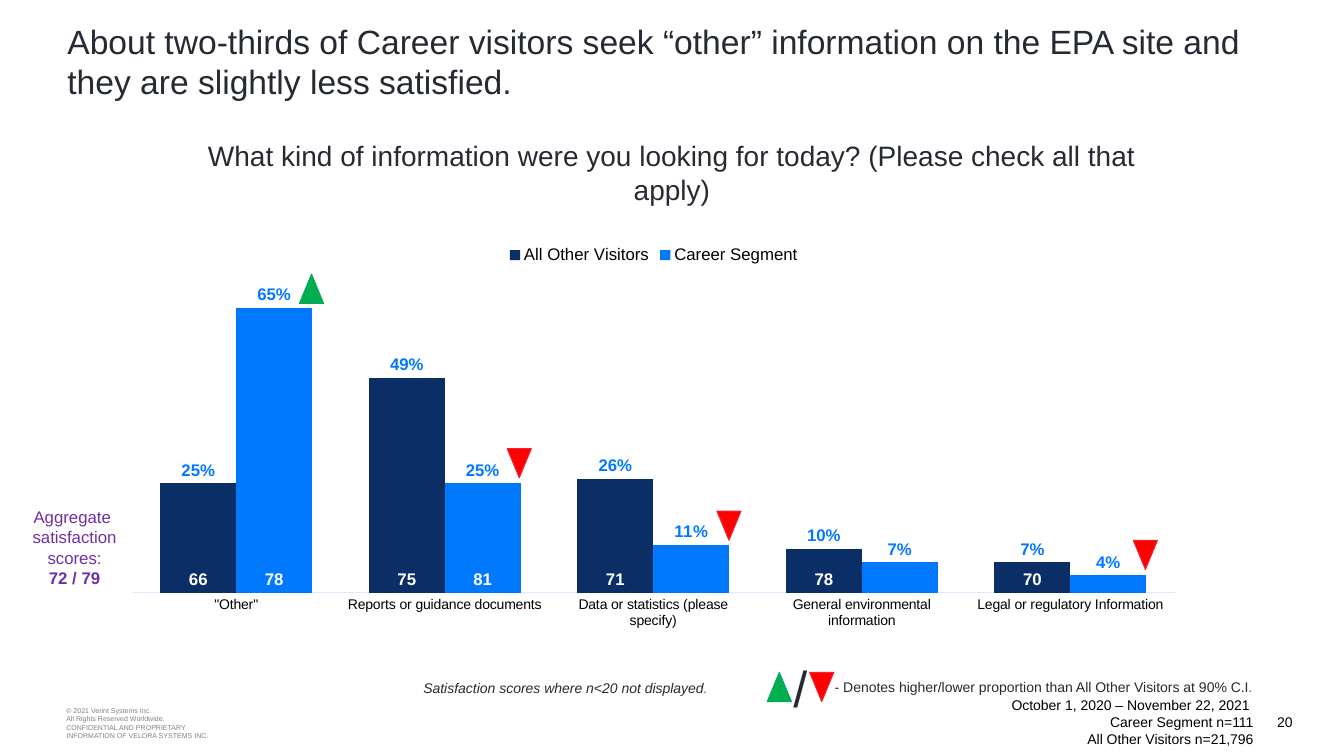
import copy
from dataclasses import dataclass

import pptx
import pptx.chart.data
import pptx.dml.color
import pptx.enum.chart
import pptx.enum.shapes
import pptx.enum.text
import pptx.oxml
import pptx.oxml.ns
import pptx.util

PX = 9144  # one px is a hundredth of an inch
FONT = "Arial"
COLORS = {
    "ink": "262A32", "black": "000000", "gray": "808080", "white": "FFFFFF",
    "navy": "0A2E65", "blue": "0079FF", "pale": "D9EBFF", "purple": "7030A0",
    "green": "00B050", "green line": "09A761", "red": "FF0000", "red line": "EE2737",
}
ALIGN = pptx.enum.text.PP_ALIGN
ANCHOR = pptx.enum.text.MSO_ANCHOR
LABEL = pptx.enum.chart.XL_LABEL_POSITION
TICK = pptx.enum.chart.XL_TICK_MARK


@dataclass(frozen=True)
class Run:
    text: str
    color: str = "ink"
    bold: bool = False
    italic: bool = False


@dataclass(frozen=True)
class TextBlock:
    box: tuple[int, int, int, int]
    size: int
    paragraphs: list[list[Run]]
    align: ALIGN = ALIGN.LEFT
    anchor: ANCHOR = ANCHOR.TOP
    wrap: bool = True


@dataclass(frozen=True)
class Marker:
    """A triangle for a higher (up) or lower (down) proportion."""
    left: int
    top: int
    higher: bool = False


@dataclass(frozen=True)
class Series:
    name: str
    values: tuple
    fill: str | None
    label_color: str
    label_position: LABEL
    number_format: str


def lines(color: str, *texts: str) -> list[list[Run]]:
    return [[Run(text, color)] for text in texts]


TEXTS = [
    TextBlock((56, 694, 240, 47), 5, lines(
        "gray", "© 2021 Verint Systems Inc.", "All Rights Reserved Worldwide.",
        "CONFIDENTIAL AND PROPRIETARY", "INFORMATION OF VELORA SYSTEMS INC."),
        anchor=ANCHOR.MIDDLE),
    TextBlock((1181, 693, 111, 47), 10, lines("black", "20"), ALIGN.RIGHT, ANCHOR.MIDDLE),
    TextBlock((57, 16, 1220, 77), 24, lines(
        "ink", "About two-thirds of Career visitors seek “other” information on the EPA site "
        "and they are slightly less satisfied.")),
    TextBlock((653, 693, 600, 47), 10, lines(
        "black", "October 1, 2020 – November 22, 2021 ", "Career Segment n=111",
        "All Other Visitors n=21,796"), ALIGN.RIGHT, ANCHOR.MIDDLE),
    TextBlock((155, 133, 1023, 77), 20, lines(
        "ink", "What kind of information were you looking for today? "
        "(Please check all that apply)"), ALIGN.CENTER),
    TextBlock((410, 670, 349, 24), 10, [[
        Run("Satisfaction scores where n<20 not displayed", italic=True),
        Run(".", "blue", italic=True)]], anchor=ANCHOR.MIDDLE),
    TextBlock((14, 498, 120, 91), 12, [
        *lines("purple", "Aggregate ", "satisfaction scores:"),
        [Run("72 / 79", "purple", bold=True)]], ALIGN.CENTER),
]
MARKERS = [Marker(297, 272, True), Marker(503, 445), Marker(711, 507), Marker(1124, 536)]

KEY_TEXTS = [
    TextBlock((818, 668, 445, 27), 10, [[
        Run("- Denotes higher/lower proportion than All Other Visitors at 90% C.I"),
        Run(".", "blue")]], anchor=ANCHOR.MIDDLE),
    TextBlock((777, 647, 34, 71), 36, lines("ink", "/"), wrap=False),
]
KEY_MARKERS = [Marker(761, 667, True), Marker(803, 667)]

CATEGORIES = ['"Other"', "Reports or guidance documents", "Data or statistics (please specify)",
              "General environmental information", "Legal or regulatory Information"]
SERIES = [
    Series("All Other Visitors", (0.25, 0.49, 0.26, 0.1, 0.07), "navy", "blue",
           LABEL.OUTSIDE_END, "0%"),
    Series("Career Segment", (0.65, 0.25, 0.11, 0.07, 0.04), "blue", "blue",
           LABEL.OUTSIDE_END, "0%"),
    Series("Series 3", (66, 75, 71, 78, 70), None, "white", LABEL.INSIDE_BASE, "0"),
    Series("Series 4", (78, 81, None, None, None), None, "white", LABEL.INSIDE_BASE, "0"),
]
SHARES = 2  # the first series are shares, the others satisfaction scores
C_NS = pptx.oxml.ns.nsdecls("c", "a")
SCORE_AXES = [
    f"""<c:valAx {C_NS}><c:axId val="5002"/><c:scaling><c:orientation val="minMax"/></c:scaling>
    <c:delete val="0"/><c:axPos val="r"/><c:numFmt formatCode="0" sourceLinked="0"/>
    <c:majorTickMark val="out"/><c:minorTickMark val="none"/><c:tickLblPos val="none"/>
    <c:spPr><a:ln><a:noFill/></a:ln></c:spPr><c:crossAx val="5001"/><c:crosses val="max"/></c:valAx>""",
    f"""<c:catAx {C_NS}><c:axId val="5001"/><c:scaling><c:orientation val="minMax"/></c:scaling>
    <c:delete val="1"/><c:axPos val="b"/><c:majorTickMark val="none"/><c:minorTickMark val="none"/>
    <c:tickLblPos val="nextTo"/><c:crossAx val="5002"/><c:crosses val="autoZero"/></c:catAx>""",
]
PLOT_LAYOUT = f"""<c:layout {C_NS}><c:manualLayout><c:layoutTarget val="inner"/>
    <c:xMode val="edge"/><c:yMode val="edge"/><c:x val="0.014"/><c:y val="0.127"/>
    <c:w val="0.971"/><c:h val="0.768"/></c:manualLayout></c:layout>"""


def rgb(name: str) -> pptx.dml.color.RGBColor:
    return pptx.dml.color.RGBColor.from_string(COLORS[name])


def emu(*lengths: int) -> list[pptx.util.Emu]:
    return [pptx.util.Emu(length * PX) for length in lengths]


def set_font(font, size: int, color: str, bold: bool = False, italic: bool = False) -> None:
    font.name, font.size = FONT, pptx.util.Pt(size)
    font.bold, font.italic = bold, italic
    font.color.rgb = rgb(color)


def add_text(shapes, block: TextBlock) -> None:
    frame = shapes.add_textbox(*emu(*block.box)).text_frame
    frame.word_wrap, frame.vertical_anchor = block.wrap, block.anchor
    for index, runs in enumerate(block.paragraphs):
        paragraph = frame.add_paragraph() if index else frame.paragraphs[0]
        paragraph.alignment = block.align
        for item in runs:
            run = paragraph.add_run()
            run.text = item.text
            set_font(run.font, block.size, item.color, item.bold, item.italic)


def add_marker(shapes, marker: Marker) -> None:
    shape = shapes.add_shape(pptx.enum.shapes.MSO_SHAPE.ISOSCELES_TRIANGLE,
                             *emu(marker.left, marker.top, 24, 29))
    color = "green" if marker.higher else "red"
    shape.rotation = 0 if marker.higher else 180
    shape.shadow.inherit = False
    shape.fill.solid()
    shape.fill.fore_color.rgb = rgb(color)
    shape.line.color.rgb = rgb(f"{color} line")
    shape.line.width = pptx.util.Pt(0.75)


def move_scores_to_second_axis(chart) -> None:
    share_bars = chart.element.xpath(".//c:barChart")[0]
    score_bars = copy.deepcopy(share_bars)
    for bars, unwanted in ((share_bars, slice(SHARES, None)), (score_bars, slice(SHARES))):
        for series in bars.xpath("c:ser")[unwanted]:
            bars.remove(series)
    for axis_id, value in zip(score_bars.xpath("c:axId"), ("5001", "5002")):
        axis_id.set("val", value)
    share_bars.addnext(score_bars)
    last_axis = chart.element.xpath(".//c:valAx")[-1]
    for xml in reversed(SCORE_AXES):
        last_axis.addnext(pptx.oxml.parse_xml(xml))


def add_chart(shapes) -> None:
    data = pptx.chart.data.CategoryChartData()
    data.categories = CATEGORIES
    for item in SERIES:
        data.add_series(item.name, item.values, item.number_format)
    chart = shapes.add_chart(pptx.enum.chart.XL_CHART_TYPE.COLUMN_CLUSTERED,
                             *emu(116, 233, 1065, 397), data).chart
    set_font(chart.font, 10, "blue")
    chart.has_title = False
    chart.has_legend = True
    chart.legend.position = pptx.enum.chart.XL_LEGEND_POSITION.TOP
    chart.legend.include_in_layout = False
    set_font(chart.legend.font, 12, "black")

    category_axis, value_axis = chart.category_axis, chart.value_axis
    category_axis.major_tick_mark = TICK.NONE
    set_font(category_axis.tick_labels.font, 10, "black")
    category_axis.format.line.color.rgb = rgb("pale")
    category_axis.format.line.width = pptx.util.Pt(0.75)
    value_axis.minimum_scale, value_axis.maximum_scale = 0, 0.7
    value_axis.has_major_gridlines = False
    value_axis.tick_label_position = pptx.enum.chart.XL_TICK_LABEL_POSITION.NONE
    value_axis.format.line.fill.background()

    plot = chart.plots[0]
    plot.gap_width, plot.overlap, plot.vary_by_categories = 75, 0, False
    for series, item in zip(plot.series, SERIES):
        if item.fill:
            series.format.fill.solid()
            series.format.fill.fore_color.rgb = rgb(item.fill)
        else:
            series.format.fill.background()
        labels = series.data_labels
        labels.show_value, labels.position = True, item.label_position
        labels.number_format, labels.number_format_is_linked = item.number_format, False
        set_font(labels.font, 12, item.label_color, bold=True)
    move_scores_to_second_axis(chart)

    legend_position = chart.element.xpath(".//c:legendPos")[0]
    for index in reversed(range(SHARES, len(SERIES))):
        legend_position.addnext(pptx.oxml.parse_xml(
            f'<c:legendEntry {C_NS}><c:idx val="{index}"/><c:delete val="1"/></c:legendEntry>'))
    plot_area = chart.element.xpath(".//c:plotArea")[0]
    for layout in plot_area.xpath("c:layout"):
        plot_area.remove(layout)
    plot_area.insert(0, pptx.oxml.parse_xml(PLOT_LAYOUT))


def add_items(shapes, texts: list[TextBlock], markers: list[Marker]) -> None:
    for block in texts:
        add_text(shapes, block)
    for marker in markers:
        add_marker(shapes, marker)


def main() -> None:
    presentation = pptx.Presentation()
    presentation.slide_width, presentation.slide_height = emu(1333, 750)
    slide = presentation.slides.add_slide(presentation.slide_layouts[6])
    add_chart(slide.shapes)
    add_items(slide.shapes, TEXTS, MARKERS)
    add_items(slide.shapes.add_group_shape().shapes, KEY_TEXTS, KEY_MARKERS)
    presentation.save("out.pptx")


if __name__ == "__main__":
    main()
